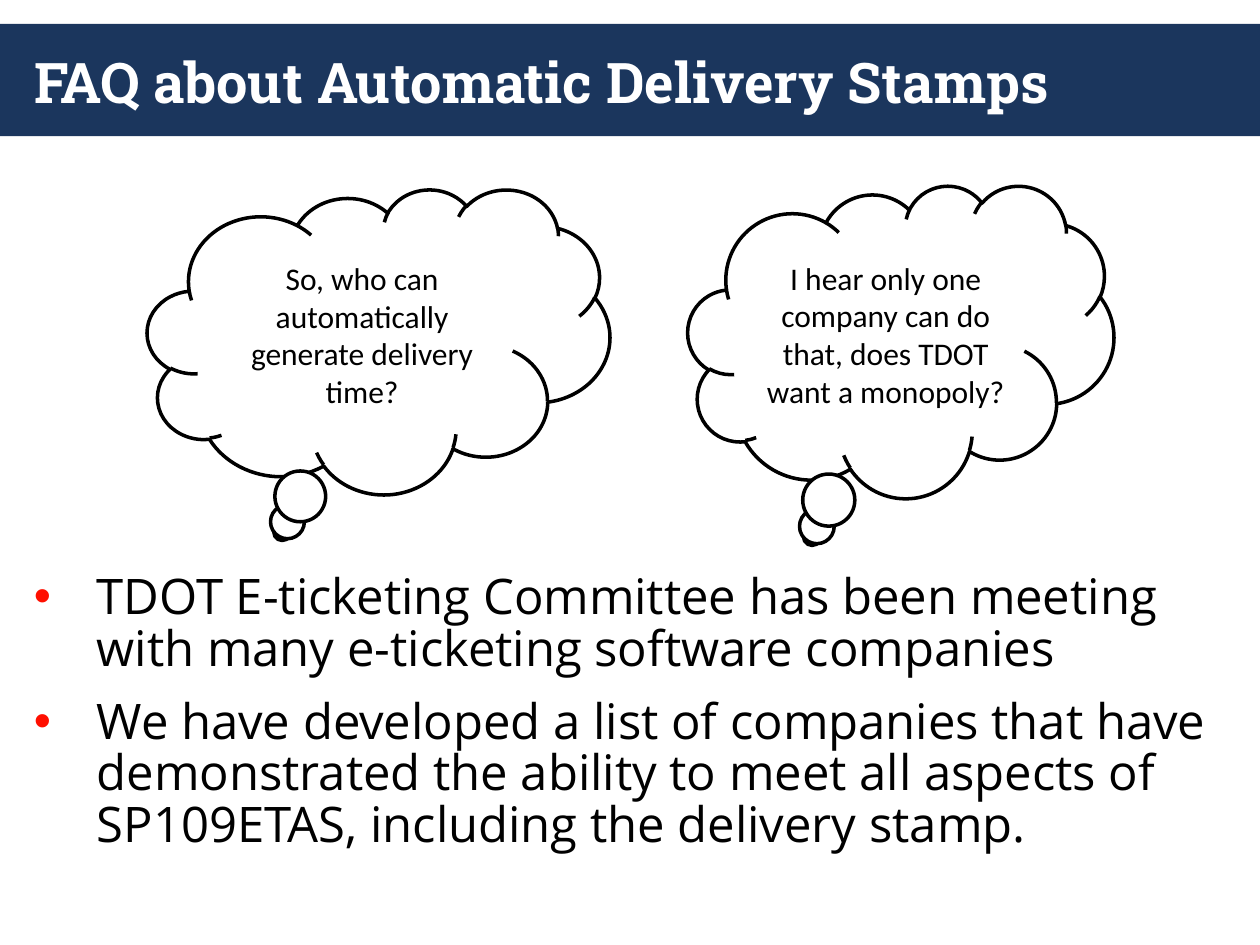
from dataclasses import dataclass

from lxml.etree import SubElement
from pptx import Presentation
from pptx.dml.color import RGBColor as RGB
from pptx.enum.shapes import MSO_SHAPE as Shape
from pptx.enum.text import MSO_ANCHOR as Anchor, PP_ALIGN as Align
from pptx.oxml.ns import qn
from pptx.util import Inches, Pt


@dataclass(frozen=True)
class Theme:
    navy: str = "1B365D"
    white: str = "FFFFFF"
    black: str = "000000"
    red: str = "FF0F00"
    title_font: str = "Roboto Slab"
    body_font: str = "Open Sans"
    cloud_font: str = "Calibri"
    title_size: int = 32
    body_size: int = 28
    cloud_size: int = 18
    outline: int = 2
    paragraph_gap: int = 12
    line_spacing: float = 0.88
    hanging: float = 0.5


class Deck:
    """Builds slides in one theme, placing elements by shares of the slide size."""

    def __init__(self, theme, width, height):
        self.theme = theme
        self.prs = Presentation()
        self.prs.slide_width, self.prs.slide_height = Inches(width), Inches(height)
        self.s = None

    def add_slide(self):
        self.s = self.prs.slides.add_slide(self.prs.slide_layouts[5])

    def box(self, left, top, width, height):
        w, h = self.prs.slide_width, self.prs.slide_height
        return int(left * w), int(top * h), int(width * w), int(height * h)

    def set_text(self, p, text, font, size, color, bold=False):
        p.text = text
        for r in p.runs:
            r.font.name, r.font.size, r.font.bold = font, Pt(size), bold
            r.font.color.rgb = RGB.from_string(color)

    def shape(self, kind, area, fill, line=None):
        sp = self.s.shapes.add_shape(kind, *self.box(*area))
        sp.shadow.inherit = False
        sp.fill.solid()
        sp.fill.fore_color.rgb = RGB.from_string(fill)
        if line:
            sp.line.color.rgb = RGB.from_string(line)
            sp.line.width = Pt(self.theme.outline)
        else:
            sp.line.fill.background()
        return sp

    def title(self, text, bar_area, text_area):
        t = self.theme
        bar = self.shape(Shape.RECTANGLE, bar_area, t.navy)
        sp = self.s.shapes.title
        sp.left, sp.top, sp.width, sp.height = self.box(*text_area)
        bar.element.addnext(sp.element)
        tf = sp.text_frame
        tf.word_wrap, tf.vertical_anchor = True, Anchor.MIDDLE
        p = tf.paragraphs[0]
        self.set_text(p, text, t.title_font, t.title_size, t.white, bold=True)
        p.alignment = Align.LEFT

    def cloud(self, text, area):
        t = self.theme
        tf = self.shape(Shape.CLOUD_CALLOUT, area, t.white, t.black).text_frame
        tf.word_wrap, tf.vertical_anchor = True, Anchor.MIDDLE
        p = tf.paragraphs[0]
        self.set_text(p, text, t.cloud_font, t.cloud_size, t.black)
        p.alignment = Align.CENTER

    def bullets(self, items, area):
        t = self.theme
        tf = self.s.shapes.add_textbox(*self.box(*area)).text_frame
        tf.word_wrap = True
        for i, text in enumerate(items):
            p = tf.add_paragraph() if i else tf.paragraphs[0]
            p.line_spacing = t.line_spacing
            p.space_before = Pt(t.paragraph_gap if i else 0)
            pPr = p._p.get_or_add_pPr()
            pPr.set("marL", str(Inches(t.hanging)))
            pPr.set("indent", str(-Inches(t.hanging)))
            color = SubElement(pPr, qn("a:buClr"))
            SubElement(color, qn("a:srgbClr"), val=t.red)
            SubElement(pPr, qn("a:buFont"), typeface="Arial")
            SubElement(pPr, qn("a:buChar"), char="•")
            self.set_text(p, text, t.body_font, t.body_size, t.black)


def main():
    deck = Deck(Theme(), 10, 7.5)
    deck.add_slide()

    def area(left, top, width, height):
        return left / 10, top / 7.5, width / 10, height / 7.5

    deck.title("FAQ about Automatic Delivery Stamps",
               area(0, 0.19, 10, 0.89), area(0.17, 0.19, 9.67, 0.9))
    deck.bullets([
        "TDOT E-ticketing Committee has been meeting with many e-ticketing software companies",
        "We have developed a list of companies that have demonstrated the ability "
        "to meet all aspects of SP109ETAS, including the delivery stamp.",
    ], area(0.17, 4.5, 9.67, 2.83))
    deck.cloud("So, who can automatically generate delivery time?",
               area(1.17, 1.5, 3.67, 2.42))
    deck.cloud("I hear only one company can do that, does TDOT want a monopoly?",
               area(5.46, 1.47, 3.38, 2.48))
    deck.prs.save("out.pptx")


if __name__ == "__main__":
    main()
